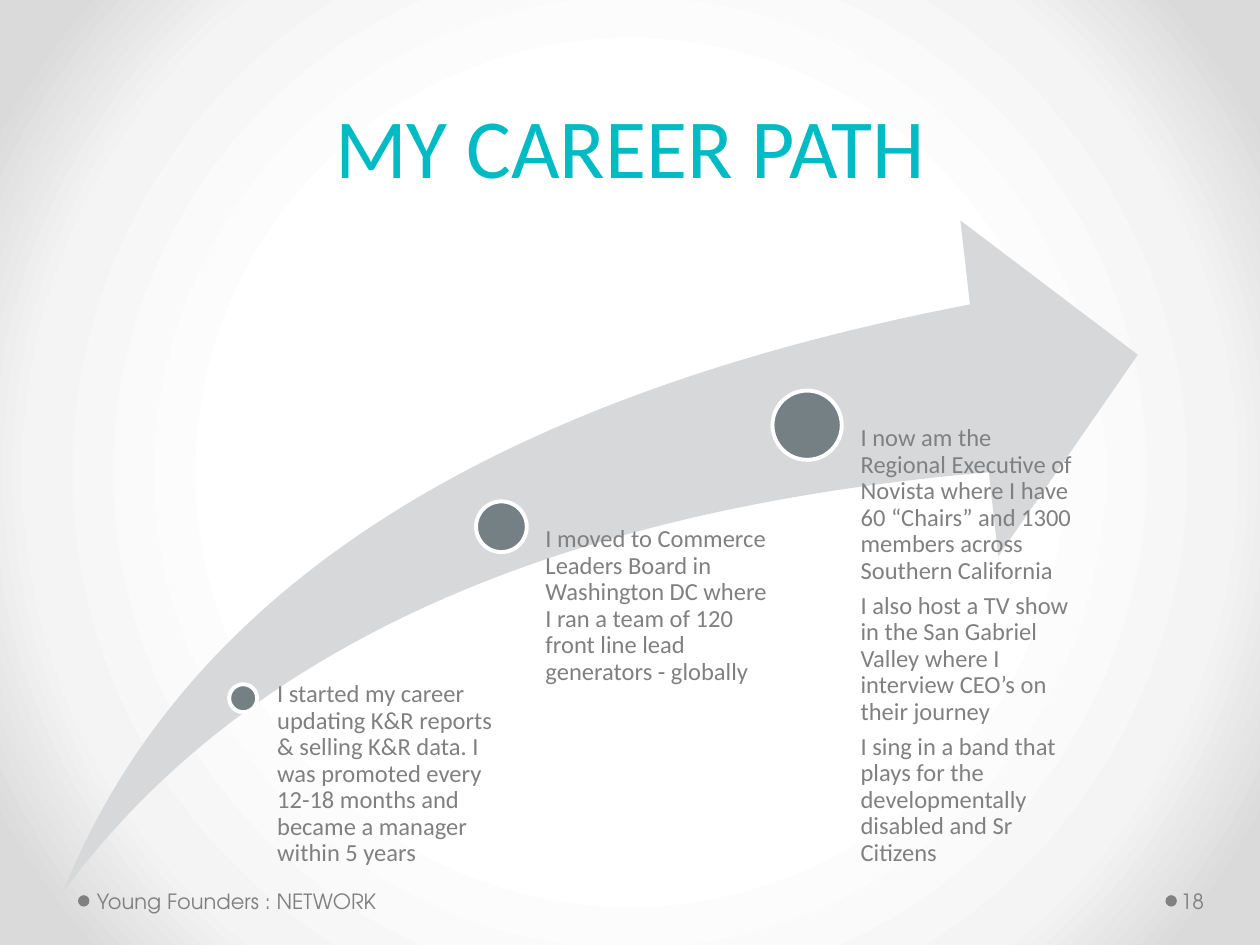
from pptx import Presentation
from pptx.dml.color import RGBColor
from pptx.enum.shapes import MSO_SHAPE as SHAPE
from pptx.enum.text import MSO_ANCHOR as ANCHOR, PP_ALIGN as ALIGN
from pptx.oxml import parse_xml
from pptx.oxml.ns import nsdecls
from pptx.util import Pt

TEAL, GREY, SLATE, SILVER, WHITE = "00BAC4", "808080", "758085", "D6D8D9", "FFFFFF"
BODY_FONT, FOOTER_FONT = "Calibri", "TeX Gyre Adventor"
BACKGROUND_STOPS = [(50, WHITE), (76, "F4F4F4"), (92, "DADADA")]

# dot box, text box, left inset, paragraphs
MILESTONES = [
    ((131, 391, 16), (149.8, 389.5, 143.3, 110.9), 8.6, [
        "I started my career updating K&R reports & selling K&R data. I was "
        "promoted every 12-18 months and became a manager within 5 years"]),
    ((272, 286.5, 29), (296.6, 301, 147.6, 208.8), 15.1, [
        "I moved to Commerce Leaders Board in Washington DC where I ran a "
        "team of 120 front line lead generators - globally"]),
    ((441.4, 223.2, 39.6), (470.9, 243.2, 147.6, 267), 20.9, [
        "I now am the Regional Executive of Novista where I have 60 “Chairs” "
        "and 1300 members across Southern California",
        "I also host a TV show in the San Gabriel Valley where I interview "
        "CEO’s on their journey",
        "I sing in a band that plays for the developmentally disabled and Sr "
        "Citizens"]),
]


def rgb(color):
    return RGBColor.from_string(color)


def set_background(s, stops):
    """Radial gradient that spreads from the middle of the slide."""
    fill = s.background.fill
    fill.solid()
    bg_pr = s.element.cSld.find(".//{*}bgPr")
    gs = "".join(f'<a:gs pos="{pos * 1000}"><a:srgbClr val="{color}"/></a:gs>'
                 for pos, color in stops)
    grad = parse_xml(
        f'<a:gradFill {nsdecls("a")} rotWithShape="1"><a:gsLst>{gs}</a:gsLst>'
        '<a:path path="circle"><a:fillToRect l="50000" t="50000" r="50000" '
        'b="50000"/></a:path></a:gradFill>')
    bg_pr.replace(bg_pr[0], grad)


def add_filled(s, kind, box, color, outline=None):
    sp = s.shapes.add_shape(kind, *map(Pt, box))
    sp.shadow.inherit = False
    sp.fill.solid()
    sp.fill.fore_color.rgb = rgb(color)
    if outline:
        sp.line.color.rgb = rgb(outline)
        sp.line.width = Pt(2.25)
    else:
        sp.line.fill.background()
    return sp


def add_text(s, box, paragraphs, size, font=BODY_FONT, color=GREY,
             insets=(0, 0, 0, 0), anchor=ANCHOR.TOP, align=ALIGN.LEFT,
             spacing=None, after=0):
    """Insets run left, top, right, bottom."""
    tf = s.shapes.add_textbox(*map(Pt, box)).text_frame
    tf.word_wrap = True
    tf.vertical_anchor = anchor
    (tf.margin_left, tf.margin_top,
     tf.margin_right, tf.margin_bottom) = map(Pt, insets)
    tf.text = "\n".join(paragraphs)
    for p in tf.paragraphs:
        p.alignment = align
        p.line_spacing = spacing
        p.space_after = Pt(after)
        f = p.runs[0].font
        f.size, f.name = Pt(size), font
        f.color.rgb = rgb(color)


def add_title(s, box, title):
    add_text(s, box, [title], 48, color=TEAL, insets=(7.2, 3.6, 7.2, 3.6),
             anchor=ANCHOR.BOTTOM, align=ALIGN.CENTER, spacing=Pt(58))


def add_career_path(s, box, milestones):
    arrow = add_filled(s, SHAPE.SWOOSH_ARROW, box, SILVER)
    arrow.adjustments[0] = arrow.adjustments[1] = 0.25
    for (x, y, d), text_box, inset, paragraphs in milestones:
        add_filled(s, SHAPE.OVAL, (x, y, d, d), SLATE, WHITE)
        add_text(s, text_box, paragraphs, 14, insets=(inset, 0, 0, 0),
                 spacing=0.9, after=4.9)


def add_footer_item(s, box, text, dot_x, insets):
    d = 6.5
    _, top, _, height = box
    add_filled(s, SHAPE.OVAL, (dot_x, top + (height - d) / 2, d, d), GREY)
    add_text(s, box, [text], 12, font=FOOTER_FONT, insets=insets,
             anchor=ANCHOR.MIDDLE)


def main():
    prs = Presentation()
    prs.slide_width, prs.slide_height = Pt(720), Pt(540)
    s = prs.slides.add_slide(prs.slide_layouts[6])
    set_background(s, BACKGROUND_STOPS)
    add_title(s, (36, 10.8, 648, 104.4), "MY CAREER PATH")
    add_career_path(s, (36, 126, 614.2, 383.8), MILESTONES)
    add_footer_item(s, (51.8, 500.4, 224, 28.8), "Young Founders : NETWORK",
                    44.6, (3.6, 3.6, 7.2, 3.6))
    add_footer_item(s, (672.5, 500.4, 44, 28.8), "18",
                    666, (2.2, 3.6, 3.6, 3.6))
    prs.save("out.pptx")


if __name__ == "__main__":
    main()
